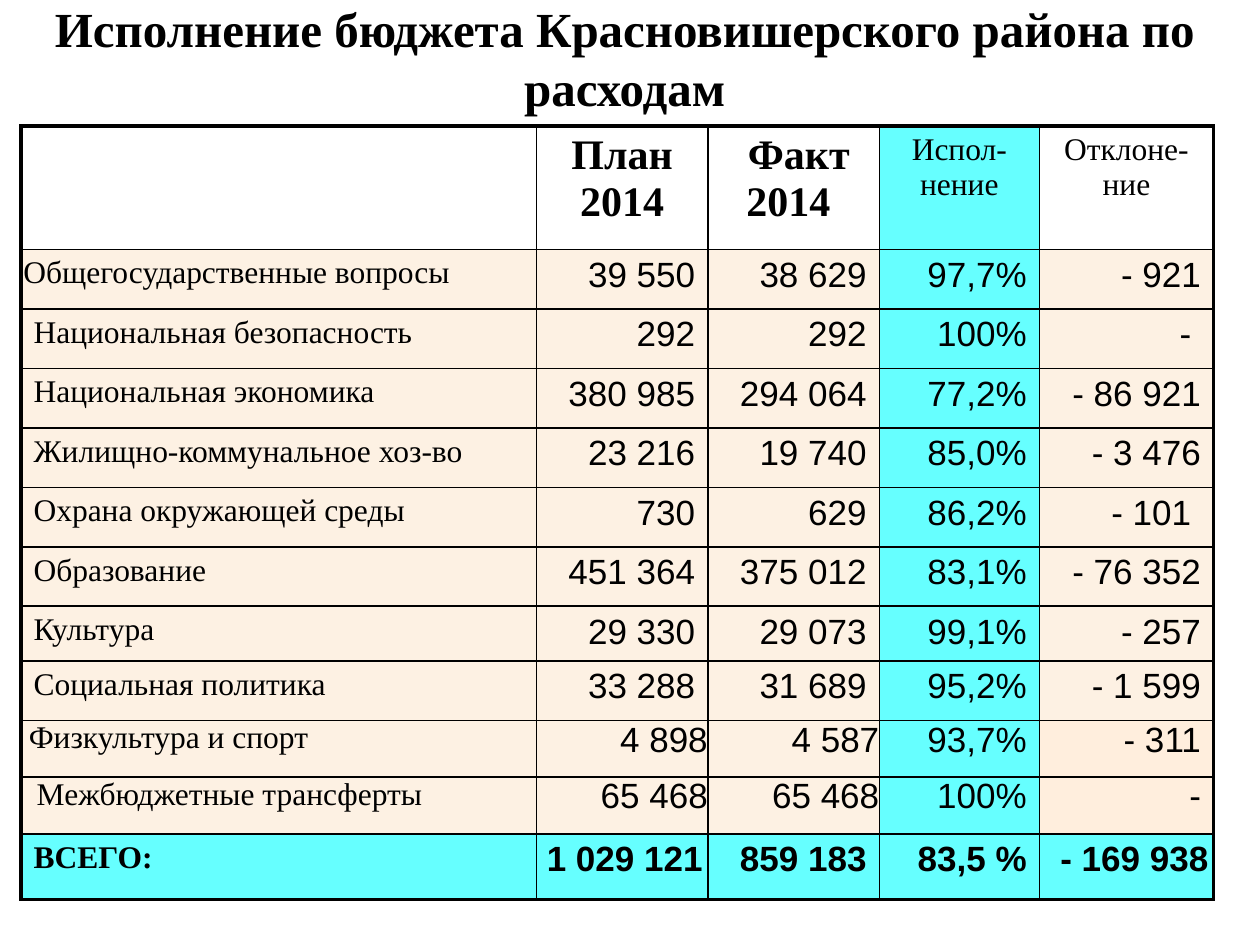
import pptx
import pptx.util
import pptx.dml.color
import pptx.enum.text
import pptx.oxml
import pptx.oxml.ns

Pt = pptx.util.Pt
RGBColor = pptx.dml.color.RGBColor
ALIGN = pptx.enum.text.PP_ALIGN
ANCHOR = pptx.enum.text.MSO_ANCHOR

BLACK = RGBColor(0x00, 0x00, 0x00)
CYAN = RGBColor(0x66, 0xFF, 0xFF)
CREAM = RGBColor(0xFD, 0xF1, 0xE3)
PEACH = RGBColor(0xFF, 0xEE, 0xDD)
SERIF, SANS = "Times New Roman", "Arial"

TITLE = "Исполнение бюджета Красновишерского района по расходам"
ROWS = [
    ("", "План 2014", " Факт 2014 ", "Испол-нение", "Отклоне-ние"),
    ("Общегосударственные вопросы", "39 550", "38 629", "97,7%", "- 921"),
    ("Национальная безопасность", "292", "292", "100%", "-"),
    ("Национальная экономика", "380 985", "294 064", "77,2%", "- 86 921"),
    ("Жилищно-коммунальное хоз-во", "23 216", "19 740", "85,0%", "- 3 476"),
    ("Охрана окружающей среды", "730", "629", "86,2%", "- 101"),
    ("Образование", "451 364", "375 012", "83,1%", "- 76 352"),
    ("Культура", "29 330", "29 073", "99,1%", "- 257"),
    ("Социальная политика", "33 288", "31 689", "95,2%", "- 1 599"),
    ("Физкультура и спорт", "4 898", "4 587", "93,7%", "- 311"),
    ("Межбюджетные трансферты", "65 468", "65 468", "100%", "-"),
    ("ВСЕГО:", "1 029 121", "859 183", "83,5 %", "- 169 938"),
]
WIDTHS = [294.5, 98, 98, 91.5, 99.5]
HEIGHTS = [70.5] + [34] * 6 + [26, 34, 32.4, 32.4, 37.5]
LAST_ROW, LAST_COL = len(ROWS) - 1, len(WIDTHS) - 1
TIGHT = (9, 10)  # rows without top and bottom margins

# Left and right margins that differ from the usual 7.2 points
SIDES = {
    (1, 0): (1.4, 1.4), (2, 4): (7.2, 12.8), (5, 4): (7.2, 12.8),
    (9, 0): (4.5, 0), (10, 0): (9, 0),
    (LAST_ROW, 1): (2.9, 2.9), (LAST_ROW, 4): (2.9, 2.9),
}
SIDES.update({(row, col): (0, 0) for row in TIGHT for col in (1, 2)})


def put_text(frame, text, font=SERIF, size=18, bold=False, align=ALIGN.LEFT):
    para = frame.paragraphs[0]
    para.alignment = align
    face = para.font if not text else None
    if text:
        run = para.add_run()
        run.text = text
        face = run.font
    face.name, face.size, face.bold = font, Pt(size), bold
    face.color.rgb = BLACK


def add_title(slide, left, top, width, height):
    box = slide.shapes.add_textbox(Pt(left), Pt(top), Pt(width), Pt(height))
    frame = box.text_frame
    frame.word_wrap = True
    frame.vertical_anchor = ANCHOR.MIDDLE
    put_text(frame, TITLE, size=28, bold=True, align=ALIGN.CENTER)


def add_edges(cell, row, col):
    """Thick lines round the table, thin ones inside."""
    outer = {"L": col == 0, "R": col == LAST_COL,
             "T": row == 0, "B": row == LAST_ROW}
    for side, thick in outer.items():
        width = Pt(2.25 if thick else 1)
        cell._tc.get_or_add_tcPr().append(pptx.oxml.parse_xml(
            f'<a:ln{side} {pptx.oxml.ns.nsdecls("a")} w="{width}">'
            f'<a:solidFill><a:srgbClr val="{BLACK}"/></a:solidFill>'
            f'</a:ln{side}>'))


def get_fill(row, col):
    if row == LAST_ROW or col == 3:
        return CYAN
    if row == 0:
        return None
    return PEACH if row in TIGHT and col == LAST_COL else CREAM


def get_style(row, col):
    if row == 0:
        major = col in (1, 2)
        return dict(size=24 if major else 18, bold=major, align=ALIGN.CENTER)
    bold = row == LAST_ROW
    if col == 0:
        return dict(bold=bold)
    return dict(font=SANS, size=20, bold=bold, align=ALIGN.RIGHT)


def fill_cell(cell, text, row, col):
    sides = SIDES.get((row, col), (7.2, 7.2))
    cell.margin_left, cell.margin_right = map(Pt, sides)
    cell.margin_top = cell.margin_bottom = Pt(0 if row in TIGHT else 3.6)
    add_edges(cell, row, col)
    color = get_fill(row, col)
    if color is None:
        cell.fill.background()
    else:
        cell.fill.solid()
        cell.fill.fore_color.rgb = color
    put_text(cell.text_frame, text, **get_style(row, col))


def add_budget(slide, left, top):
    table = slide.shapes.add_table(
        len(ROWS), len(WIDTHS), Pt(left), Pt(top),
        Pt(sum(WIDTHS)), Pt(sum(HEIGHTS))).table
    table.first_row = table.horz_banding = False
    for column, width in zip(table.columns, WIDTHS):
        column.width = Pt(width)
    for line, height in zip(table.rows, HEIGHTS):
        line.height = Pt(height)
    for row, texts in enumerate(ROWS):
        for col, text in enumerate(texts):
            fill_cell(table.cell(row, col), text, row, col)


def main():
    deck = pptx.Presentation()
    deck.slide_width, deck.slide_height = Pt(720), Pt(540)
    slide = deck.slides.add_slide(deck.slide_layouts[6])
    add_title(slide, 12, 18, 690, 30)
    add_budget(slide, 12, 72)
    deck.save("out.pptx")


if __name__ == "__main__":
    main()
